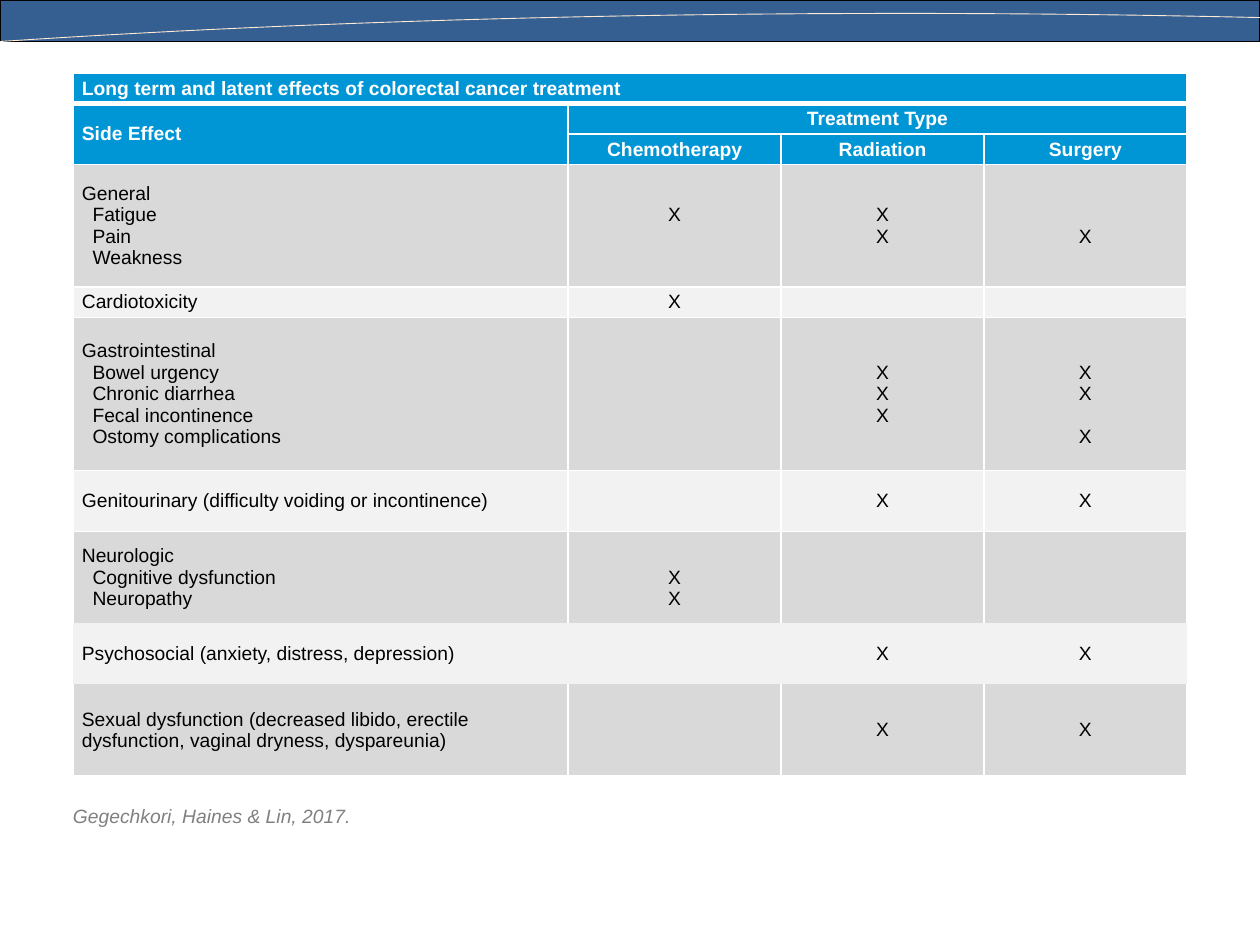
from lxml.etree import SubElement
from pptx import Presentation
from pptx.dml.color import RGBColor
from pptx.enum.shapes import MSO_SHAPE as Shape
from pptx.enum.text import MSO_ANCHOR as Anchor, PP_ALIGN as Align
from pptx.oxml.ns import qn
from pptx.util import Inches, Pt

WIDTH, HEIGHT = Inches(10), Inches(7.5)
BLACK = RGBColor(0x00, 0x00, 0x00)
WHITE = RGBColor(0xFF, 0xFF, 0xFF)
NAVY = RGBColor(0x36, 0x5F, 0x91)
CREAM = RGBColor(0xFF, 0xEA, 0xD5)
BLUE = RGBColor(0x00, 0x96, 0xD6)
BANDS = RGBColor(0xD9, 0xD9, 0xD9), RGBColor(0xF2, 0xF2, 0xF2)
GRAY = RGBColor(0x80, 0x80, 0x80)

FONT, SIZE = "Arial", Pt(11)
LINE = Pt(12.5)
ROW_UNIT = Inches(5.58) / 23
COLUMNS = [Inches(width) for width in (3.93, 1.69, 1.61, 1.61)]
HEADER_ROWS = 3
BORDERLESS = "Psychosocial (anxiety, distress, depression)"
TREATMENTS = ["Chemotherapy", "Radiation", "Surgery"]

# Row height in units, lines of the side effect, marked lines per treatment
EFFECTS = [
    (4, ["General", "Fatigue", "Pain", "Weakness"], [[1], [1, 2], [2]]),
    (1, ["Cardiotoxicity"], [[0], [], []]),
    (5, ["Gastrointestinal", "Bowel urgency", "Chronic diarrhea",
         "Fecal incontinence", "Ostomy complications"],
     [[], [1, 2, 3], [1, 2, 4]]),
    (2, ["Genitourinary (difficulty voiding or incontinence)"],
     [[], [0], [0]]),
    (3, ["Neurologic", "Cognitive dysfunction", "Neuropathy"],
     [[1, 2], [], []]),
    (2, [BORDERLESS], [[], [0], [0]]),
    (3, ["Sexual dysfunction (decreased libido, erectile dysfunction, "
         "vaginal dryness, dyspareunia)"], [[], [0], [0]]),
]


def add_span(para, text, color, bold=False, italic=False):
    span = para.add_run()
    span.text = text
    font = span.font
    font.name, font.size = FONT, SIZE
    font.bold, font.italic = bold, italic
    font.color.rgb = color


def next_para(frame, index):
    return frame.add_paragraph() if index else frame.paragraphs[0]


def set_borders(cell, widths):
    """Draw white edges; a width of 0 leaves that edge out."""
    properties = cell._tc.get_or_add_tcPr()
    for side in "LRTB":
        line = SubElement(properties, qn(f"a:ln{side}"), w=str(Pt(widths[side])))
        if widths[side]:
            fill = SubElement(line, qn("a:solidFill"))
            SubElement(fill, qn("a:srgbClr"), val=str(WHITE))
        else:
            SubElement(line, qn("a:noFill"))


def edge_widths(row):
    """Leave the borderless row, and the edges touching it, undrawn."""
    bare = HEADER_ROWS + [lines[0] for _, lines, _ in EFFECTS].index(BORDERLESS)
    widths = dict.fromkeys("LRTB", 0 if row == bare else 1)
    if row == 0:
        widths["B"] = 3
    elif row == bare - 1:
        widths["B"] = 0
    elif row == bare + 1:
        widths["T"] = 0
    return widths


def style_cell(cell, row, fill):
    set_borders(cell, edge_widths(row))
    cell.fill.solid()
    cell.fill.fore_color.rgb = fill
    cell.vertical_anchor = Anchor.MIDDLE
    cell.margin_left = cell.margin_right = Inches(0.07)
    cell.margin_top = cell.margin_bottom = 0


def fill_header(table):
    table.cell(0, 0).merge(table.cell(0, 3))
    table.cell(1, 0).merge(table.cell(2, 0))
    table.cell(1, 1).merge(table.cell(1, 3))
    headings = [
        (0, 0, "Long term and latent effects of colorectal cancer treatment"),
        (1, 0, "Side Effect"),
        (1, 1, "Treatment Type"),
    ] + [(2, column, name) for column, name in enumerate(TREATMENTS, 1)]
    for row, column, text in headings:
        para = table.cell(row, column).text_frame.paragraphs[0]
        para.alignment = Align.CENTER if column else Align.LEFT
        add_span(para, text, WHITE, bold=True)


def fill_effect(cell, lines):
    """Write a heading line with its indented symptoms."""
    for index, text in enumerate(lines):
        para = next_para(cell.text_frame, index)
        if index:
            para._p.get_or_add_pPr().set("marL", str(Pt(6.1)))
        add_span(para, text, BLACK)


def fill_marks(cell, marks, line_count):
    """Set each X level with its line of the side effect."""
    if not marks:
        para = cell.text_frame.paragraphs[0]
        SubElement(para._p, qn("a:endParaRPr"), sz=str(int(SIZE.pt * 100)))
        return
    shift = marks[0] + marks[-1] - (line_count - 1)
    cell.margin_top = max(shift, 0) * LINE
    cell.margin_bottom = max(-shift, 0) * LINE
    for index, mark in enumerate(marks):
        para = next_para(cell.text_frame, index)
        para.alignment = Align.CENTER
        if index and mark - marks[index - 1] > 1:
            para.space_before = Pt((mark - marks[index - 1] - 1) * LINE.pt)
        add_span(para, "X", BLACK)


def add_effects_table(page):
    heights = [1] * HEADER_ROWS + [units for units, _, _ in EFFECTS]
    table = page.shapes.add_table(
        len(heights), len(COLUMNS), Inches(0.58), Inches(0.58),
        sum(COLUMNS), int(sum(heights) * ROW_UNIT)).table
    table.first_row = table.horz_banding = False
    for column, width in zip(table.columns, COLUMNS):
        column.width = width
    for index, units in enumerate(heights):
        table.rows[index].height = int(units * ROW_UNIT)
        header = index < HEADER_ROWS
        fill = BLUE if header else BANDS[(index - HEADER_ROWS) % 2]
        for cell in table.rows[index].cells:
            style_cell(cell, index, fill)
    fill_header(table)
    for row, (_, lines, treatments) in enumerate(EFFECTS, HEADER_ROWS):
        fill_effect(table.cell(row, 0), lines)
        for column, marks in enumerate(treatments, 1):
            fill_marks(table.cell(row, column), marks, len(lines))


def add_banner(page):
    band = page.shapes.add_shape(Shape.RECTANGLE, 0, 0, WIDTH, Inches(0.33))
    band.shadow.inherit = False
    band.fill.solid()
    band.fill.fore_color.rgb = NAVY
    band.line.color.rgb = BLACK
    band.line.width = Pt(0.75)


def bezier(start, first, second, end, t):
    u = 1 - t
    return (u**3 * start + 3 * u**2 * t * first
            + 3 * u * t**2 * second + t**3 * end)


def add_swoosh(page, steps=40):
    points = [(Inches(bezier(10, 7.44, 3.79, 0, step / steps)),
               Inches(bezier(0.14, 0.08, 0.08, 0.33, step / steps)))
              for step in range(steps + 1)]
    builder = page.shapes.build_freeform(*points[0])
    builder.add_line_segments(points[1:], close=False)
    swoosh = builder.convert_to_shape()
    swoosh.shadow.inherit = False
    swoosh.fill.background()
    swoosh.line.color.rgb = CREAM
    swoosh.line.width = Pt(0.5)


def add_citation(page):
    box = page.shapes.add_textbox(
        Inches(0.48), Inches(6.33), Inches(9.02), Inches(0.29))
    box.text_frame.word_wrap = True
    add_span(box.text_frame.paragraphs[0], "Gegechkori, Haines & Lin, 2017.",
             GRAY, italic=True)


def main():
    deck = Presentation()
    deck.slide_width, deck.slide_height = WIDTH, HEIGHT
    page = deck.slides.add_slide(deck.slide_layouts[6])
    add_banner(page)
    add_swoosh(page)
    add_citation(page)
    add_effects_table(page)
    deck.save("out.pptx")


if __name__ == "__main__":
    main()
